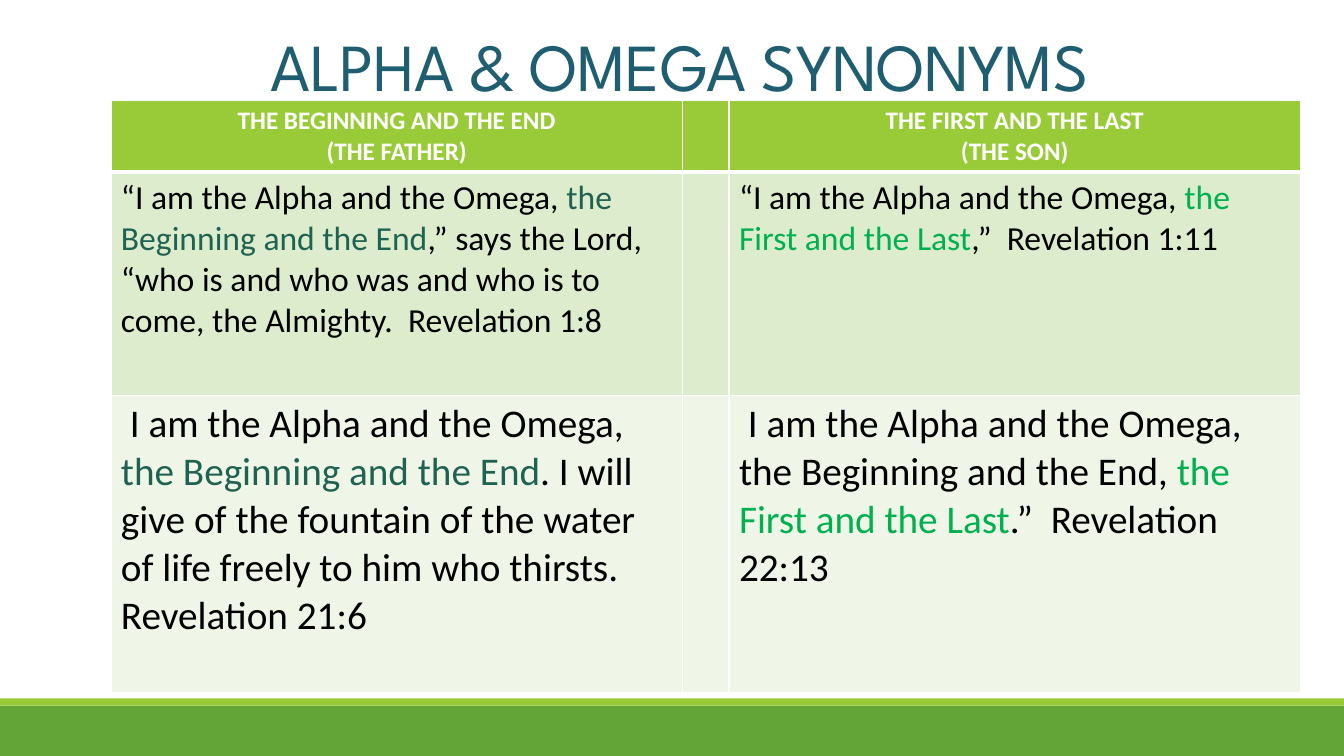
"""Build the Alpha and Omega synonyms slide."""
from lxml import etree
from pptx import Presentation
from pptx.dml.color import RGBColor as Rgb
from pptx.enum.shapes import MSO_SHAPE as Shape
from pptx.enum.text import MSO_ANCHOR as Anchor, PP_ALIGN as Align
from pptx.oxml.ns import qn
from pptx.util import Inches, Pt

COLORS = {
    "title": "1E5E70", "base": "63A537", "lime": "99CB38",
    "mint": "DEECCE", "pale": "EFF6E8", "white": "FFFFFF",
    "black": "000000", "teal": "206252", "green": "00B050",
}
TITLE = "ALPHA & OMEGA SYNONYMS"
HEADS = [
    ["THE BEGINNING AND THE END", "(THE FATHER)"],
    ["THE FIRST AND THE LAST", "(THE SON)"],
]
BEGIN = ("the Beginning and the End", "teal")
FIRST = ("the First and the Last", "green")
VERSES = [
    [
        [("“I am the Alpha and the Omega, ", "black"), BEGIN,
         (",” says the Lord, “who is and who was and who is to come, "
          "the Almighty.  Revelation 1:8", "black")],
        [("“I am the Alpha and the Omega, ", "black"), FIRST,
         (",”  Revelation 1:11", "black")],
    ],
    [
        [(" I am the Alpha and the Omega, ", "black"), BEGIN,
         (". I will give of the fountain of the water of life freely to him "
          "who thirsts. Revelation 21:6", "black")],
        [(" I am the Alpha and the Omega, the Beginning and the End, ", "black"),
         FIRST, (".”  Revelation 22:13", "black")],
    ],
]
WIDE, HIGH = 13.33, 7.5
COLS = [5.67, 0.46, 5.67]
ROWS = [0.71, 2.21, 2.95]
FILLS = ["lime", "mint", "pale"]
SIZES = [18, 24, 28]
BANDS = [("base", 7, 0.5), ("lime", 6.93, 0.07)]


def color(name):
    return Rgb.from_string(COLORS[name])


def style(font, name, size, tint=None, bold=False):
    font.name, font.size, font.bold = name, Pt(size), bold
    if tint:
        font.color.rgb = color(tint)


def edge(cell, row):
    """Draw the white cell borders, thick below the header."""
    props = cell._tc.get_or_add_tcPr()
    widths = {"lnL": 1, "lnR": 1, "lnT": 3 if row == 1 else 1,
              "lnB": 3 if row == 0 else 1}
    for spot, (tag, width) in enumerate(widths.items()):
        line = etree.Element(qn("a:" + tag), w=str(Pt(width)))
        fill = etree.SubElement(line, qn("a:solidFill"))
        etree.SubElement(fill, qn("a:srgbClr"), val=COLORS["white"])
        props.insert(spot, line)


def add_bands(slide):
    for tint, top, tall in BANDS:
        band = slide.shapes.add_shape(
            Shape.RECTANGLE, 0, Inches(top), Inches(WIDE), Inches(tall))
        band.shadow.inherit = False
        band.fill.solid()
        band.fill.fore_color.rgb = color(tint)
        band.line.fill.background()


def add_title(slide):
    box = slide.shapes.add_textbox(
        Inches(1.24), Inches(0.12), Inches(11), Inches(0.97))
    frame = box.text_frame
    frame.word_wrap = True
    frame.vertical_anchor = Anchor.BOTTOM
    para = frame.paragraphs[0]
    para.alignment, para.line_spacing = Align.CENTER, 0.85
    run = para.add_run()
    run.text = TITLE
    style(run.font, "League Spartan", 48, "title")
    run._r.get_or_add_rPr().set("spc", "-50")


def add_head(frame, lines):
    frame.text = "\n".join(lines)
    for para in frame.paragraphs:
        para.alignment = Align.CENTER
        style(para.font, "Calibri", SIZES[0], "white", True)


def add_verse(frame, parts, size):
    para = frame.paragraphs[0]
    style(para.font, "Calibri", size)
    for text, tint in parts:
        run = para.add_run()
        run.text = text
        run.font.color.rgb = color(tint)


def add_grid(slide):
    table = slide.shapes.add_table(
        len(ROWS), len(COLS), Inches(1.1), Inches(1),
        Inches(sum(COLS)), Inches(sum(ROWS))).table
    for col, width in zip(table.columns, COLS):
        col.width = Inches(width)
    for row, tall in enumerate(ROWS):
        table.rows[row].height = Inches(tall)
        for cell in table.rows[row].cells:
            cell.fill.solid()
            cell.fill.fore_color.rgb = color(FILLS[row])
            edge(cell, row)
        for side in range(2):
            frame = table.cell(row, side * 2).text_frame
            if row == 0:
                add_head(frame, HEADS[side])
            else:
                add_verse(frame, VERSES[row - 1][side], SIZES[row])


def main():
    deck = Presentation()
    deck.slide_width, deck.slide_height = Inches(WIDE), Inches(HIGH)
    slide = deck.slides.add_slide(deck.slide_layouts[6])
    add_bands(slide)
    add_title(slide)
    add_grid(slide)
    deck.save("out.pptx")


if __name__ == "__main__":
    main()
